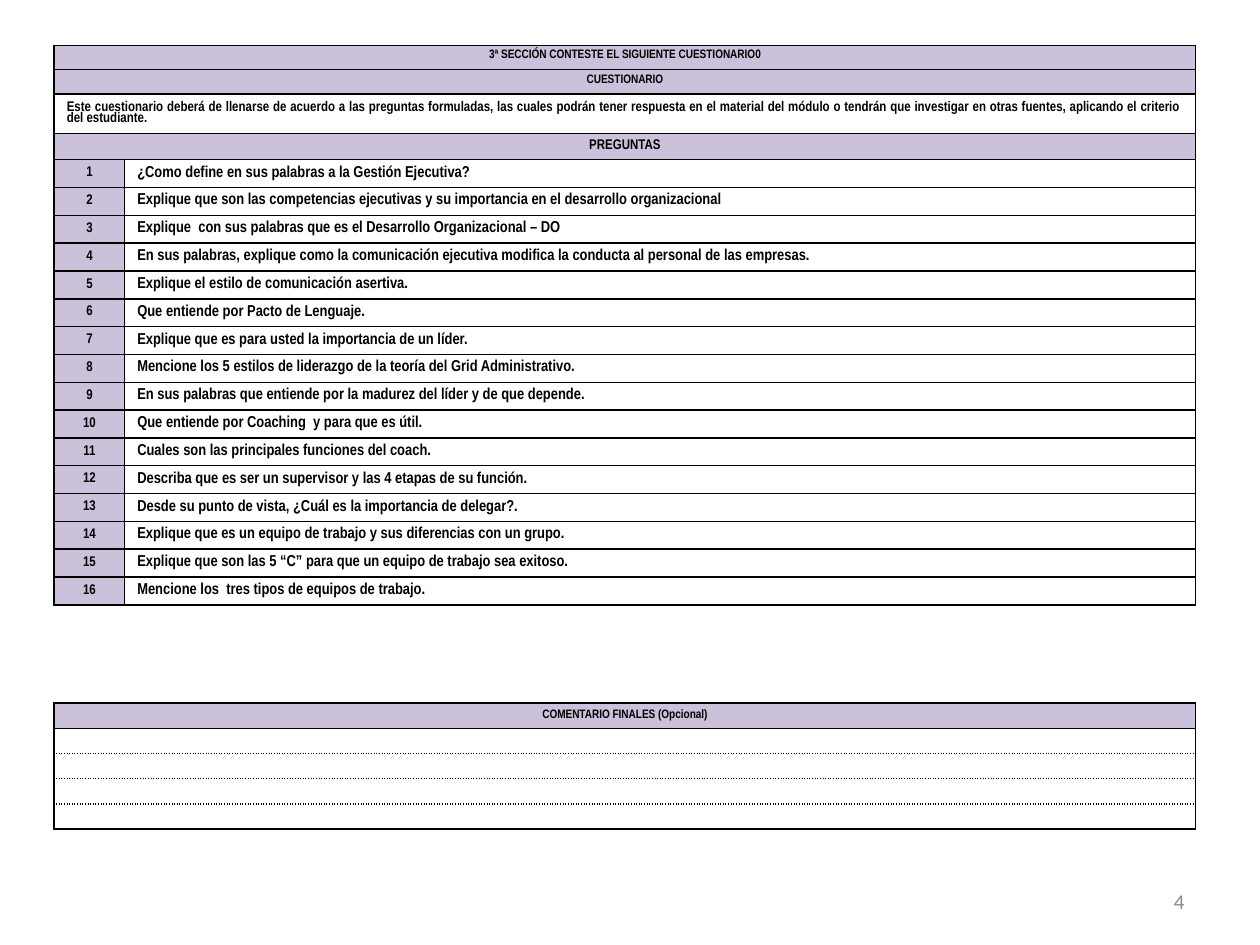
from dataclasses import dataclass

from lxml import etree
from pptx import Presentation
from pptx.dml.color import RGBColor
from pptx.enum.text import MSO_ANCHOR, PP_ALIGN
from pptx.oxml.ns import qn
from pptx.util import Inches, Pt

CENTER, JUSTIFY, LEFT, RIGHT = PP_ALIGN.CENTER, PP_ALIGN.JUSTIFY, PP_ALIGN.LEFT, PP_ALIGN.RIGHT
TOP, MIDDLE = MSO_ANCHOR.TOP, MSO_ANCHOR.MIDDLE

COLORS = {"band": "CCC1DA", "paper": "FFFFFF", "ink": "000000", "page_number": "898989"}
TABLE_FONT = "Arial Narrow"
TABLE_LEFT = 0.43
NUMBER_WIDTH, QUESTION_WIDTH = 0.56, 8.5
TABLE_WIDTH = NUMBER_WIDTH + QUESTION_WIDTH
QUESTION_HEIGHT = 0.22
COMMENT_HEIGHT = 0.2
COMMENT_LINES = 4
SOLID, DOTTED = "solid", "sysDot"


@dataclass(frozen=True)
class Heading:
    text: str
    height: float
    size: float
    fill: str = "band"
    alignment: PP_ALIGN = CENTER
    anchor: MSO_ANCHOR = MIDDLE


HEADINGS = [
    Heading("3ª SECCIÓN CONTESTE EL SIGUIENTE CUESTIONARIO0", 0.19, 7, anchor=TOP),
    Heading("CUESTIONARIO", 0.19, 7, anchor=TOP),
    Heading(
        "Este cuestionario deberá de llenarse de acuerdo a las preguntas formuladas, las cuales "
        "podrán tener respuesta en el material del módulo o tendrán que investigar en otras "
        "fuentes, aplicando el criterio del estudiante.",
        0.31, 8, "paper", JUSTIFY,
    ),
    Heading("PREGUNTAS", 0.2, 8),
]

QUESTIONS = [
    "¿Como define en sus palabras a la Gestión Ejecutiva?",
    "Explique que son las competencias ejecutivas y su importancia en el desarrollo organizacional",
    "Explique  con sus palabras que es el Desarrollo Organizacional – DO",
    "En sus palabras, explique como la comunicación ejecutiva modifica la conducta al personal "
    "de las empresas.",
    "Explique el estilo de comunicación asertiva.",
    "Que entiende por Pacto de Lenguaje.",
    "Explique que es para usted la importancia de un líder.",
    "Mencione los 5 estilos de liderazgo de la teoría del Grid Administrativo.",
    "En sus palabras que entiende por la madurez del líder y de que depende.",
    "Que entiende por Coaching  y para que es útil.",
    "Cuales son las principales funciones del coach.",
    "Describa que es ser un supervisor y las 4 etapas de su función.",
    "Desde su punto de vista, ¿Cuál es la importancia de delegar?.",
    "Explique que es un equipo de trabajo y sus diferencias con un grupo.",
    "Explique que son las 5 “C” para que un equipo de trabajo sea exitoso.",
    "Mencione los  tres tipos de equipos de trabajo.",
]


def set_borders(cell, top: str = SOLID, bottom: str = SOLID) -> None:
    properties = cell._tc.get_or_add_tcPr()
    sides = {"lnL": SOLID, "lnR": SOLID, "lnT": top, "lnB": bottom}
    for position, (side, dash) in enumerate(sides.items()):
        line = etree.Element(qn(f"a:{side}"), w=str(Pt(1)))
        fill = etree.SubElement(line, qn("a:solidFill"))
        etree.SubElement(fill, qn("a:srgbClr"), val=COLORS["ink"])
        etree.SubElement(line, qn("a:prstDash"), val=dash)
        properties.insert(position, line)


def style_cell(cell, fill: str, margin: float = 0.05, anchor: MSO_ANCHOR = MIDDLE) -> None:
    cell.fill.solid()
    cell.fill.fore_color.rgb = RGBColor.from_string(COLORS[fill])
    cell.vertical_anchor = anchor
    cell.margin_left = cell.margin_right = Inches(0.1)
    cell.margin_top = cell.margin_bottom = Inches(margin)


def write_cell(cell, text: str, size: float, alignment: PP_ALIGN) -> None:
    paragraph = cell.text_frame.paragraphs[0]
    paragraph.text = text
    paragraph.alignment = alignment
    paragraph.line_spacing = 0.8
    font = paragraph.font
    font.name, font.size, font.bold = TABLE_FONT, Pt(size), True
    font.color.rgb = RGBColor.from_string(COLORS["ink"])


def add_plain_table(slide, top: float, widths: list[float], heights: list[float]):
    frame = slide.shapes.add_table(
        len(heights), len(widths), Inches(TABLE_LEFT), Inches(top),
        Inches(sum(widths)), Inches(sum(heights)),
    )
    table = frame.table
    table.first_row = table.horz_banding = False
    for column, width in zip(table.columns, widths):
        column.width = Inches(width)
    for row, height in zip(table.rows, heights):
        row.height = Inches(height)
    return table


def add_questionnaire(slide) -> None:
    heights = [heading.height for heading in HEADINGS] + [QUESTION_HEIGHT] * len(QUESTIONS)
    table = add_plain_table(slide, 0.36, [NUMBER_WIDTH, QUESTION_WIDTH], heights)
    for row, heading in enumerate(HEADINGS):
        cell = table.cell(row, 0)
        cell.merge(table.cell(row, 1))
        style_cell(cell, heading.fill, anchor=heading.anchor)
        write_cell(cell, heading.text, heading.size, heading.alignment)
    for number, question in enumerate(QUESTIONS, start=1):
        row = len(HEADINGS) + number - 1
        number_cell, question_cell = table.cell(row, 0), table.cell(row, 1)
        style_cell(number_cell, "band")
        write_cell(number_cell, str(number), 8, CENTER)
        style_cell(question_cell, "paper")
        write_cell(question_cell, question, 9, LEFT if number == 2 else JUSTIFY)
    for cell in table.iter_cells():
        set_borders(cell)


def add_comments(slide) -> None:
    table = add_plain_table(slide, 5.58, [TABLE_WIDTH], [COMMENT_HEIGHT] * (COMMENT_LINES + 1))
    title = table.cell(0, 0)
    style_cell(title, "band")
    write_cell(title, "COMENTARIO FINALES (Opcional)", 7, CENTER)
    set_borders(title)
    for row in range(1, COMMENT_LINES + 1):
        cell = table.cell(row, 0)
        style_cell(cell, "paper", margin=0.02)
        paragraph = cell.text_frame.paragraphs[0]
        etree.SubElement(paragraph._p, qn("a:endParaRPr"), sz="700")
        set_borders(
            cell,
            top=SOLID if row == 1 else DOTTED,
            bottom=SOLID if row == COMMENT_LINES else DOTTED,
        )


def add_page_number(slide, number: int) -> None:
    box = slide.shapes.add_textbox(Inches(7.17), Inches(6.95), Inches(2.33), Inches(0.4))
    box.text_frame.word_wrap = True
    box.text_frame.vertical_anchor = MIDDLE
    paragraph = box.text_frame.paragraphs[0]
    paragraph.text = str(number)
    paragraph.alignment = RIGHT
    paragraph.font.name, paragraph.font.size = "Calibri", Pt(12)
    paragraph.font.color.rgb = RGBColor.from_string(COLORS["page_number"])


def main() -> None:
    presentation = Presentation()
    presentation.slide_width, presentation.slide_height = Inches(10), Inches(7.5)
    slide = presentation.slides.add_slide(presentation.slide_layouts[6])
    add_page_number(slide, 4)
    add_questionnaire(slide)
    add_comments(slide)
    presentation.save("out.pptx")


if __name__ == "__main__":
    main()
